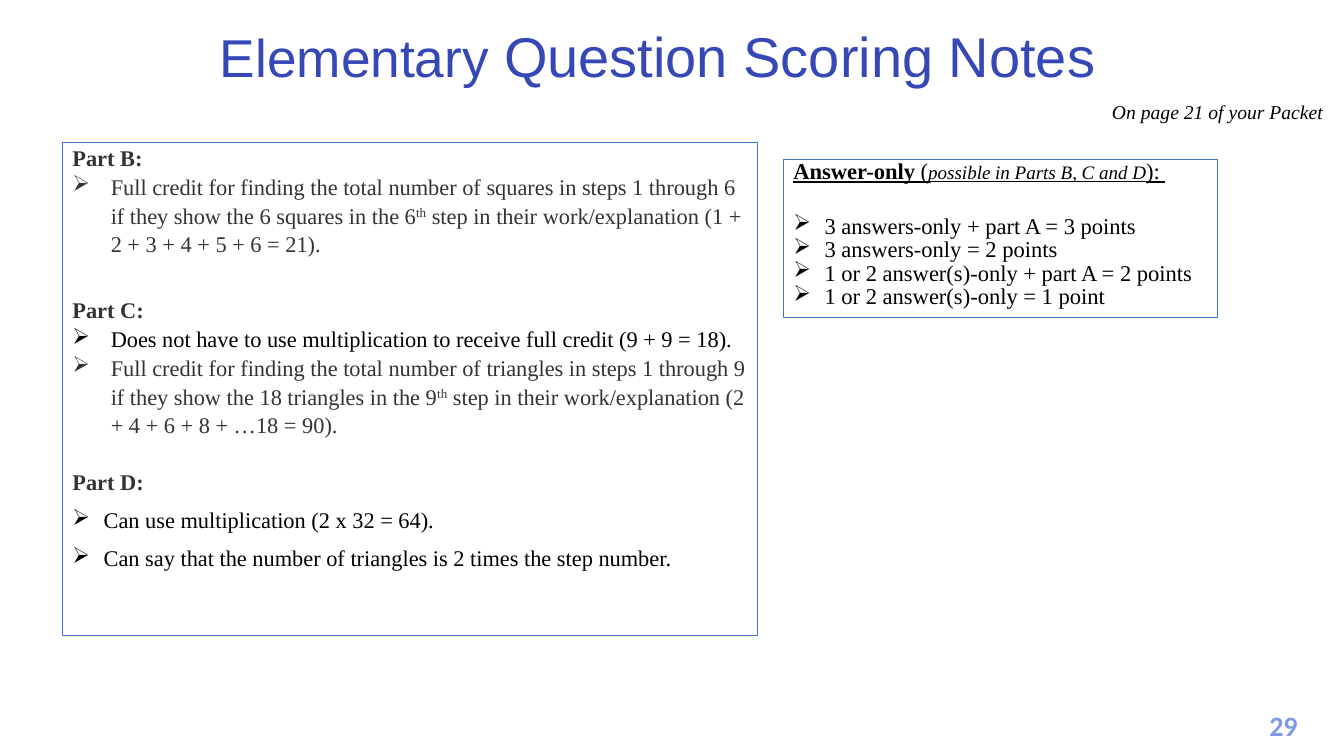
from dataclasses import dataclass

from lxml.etree import SubElement
from pptx import Presentation
from pptx.dml.color import RGBColor
from pptx.enum.shapes import MSO_SHAPE as Shape
from pptx.enum.text import MSO_ANCHOR as Anchor, PP_ALIGN as Align
from pptx.oxml.ns import qn
from pptx.util import Pt

EMU_PER_PX = 9144
BLACK = RGBColor(0x00, 0x00, 0x00)
GRAY = RGBColor(0x33, 0x33, 0x33)
TITLE_BLUE = RGBColor(0x36, 0x47, 0xB6)
NUMBER_BLUE = RGBColor(0x83, 0x97, 0xE7)
BORDER_BLUE = RGBColor(0x44, 0x72, 0xC4)
SERIF = "Times New Roman"


@dataclass(frozen=True)
class Span:
    text: str
    size: float = 16
    color: RGBColor = BLACK
    font: str = SERIF
    bold: bool = False
    italic: bool = False
    underline: bool = False
    superscript: bool = False


@dataclass(frozen=True)
class Line:
    spans: tuple[Span, ...]
    spacing: float = 1.0
    before: float = 0
    indent: int = 0
    align: Align = Align.LEFT


@dataclass(frozen=True)
class Box:
    left: int
    top: int
    width: int
    height: int
    lines: tuple[Line, ...]
    bordered: bool = False
    anchor: Anchor = Anchor.TOP


def px(length: int) -> int:
    return length * EMU_PER_PX


def add_bullet(paragraph, indent: int) -> None:
    properties = paragraph._p.get_or_add_pPr()
    properties.set("marL", str(px(indent)))
    properties.set("indent", str(-px(indent)))
    SubElement(properties, qn("a:buChar")).set("char", "➢")


def write_span(paragraph, span: Span) -> None:
    run = paragraph.add_run()
    run.text = span.text
    font = run.font
    font.name = span.font
    font.size = Pt(span.size)
    font.color.rgb = span.color
    font.bold = span.bold
    font.italic = span.italic
    font.underline = span.underline
    if span.superscript:
        run._r.get_or_add_rPr().set("baseline", "30000")


def write_line(paragraph, line: Line) -> None:
    if line.indent:
        add_bullet(paragraph, line.indent)
    paragraph.alignment = line.align
    paragraph.line_spacing = line.spacing
    paragraph.space_before = Pt(line.before)
    for span in line.spans:
        write_span(paragraph, span)


def draw_box(slide, box: Box) -> None:
    frame = px(box.left), px(box.top), px(box.width), px(box.height)
    if box.bordered:
        shape = slide.shapes.add_shape(Shape.RECTANGLE, *frame)
        shape.shadow.inherit = False
        shape.fill.background()
        shape.line.color.rgb = BORDER_BLUE
        shape.line.width = Pt(0.75)
    else:
        shape = slide.shapes.add_textbox(*frame)
    text_frame = shape.text_frame
    text_frame.word_wrap = True
    text_frame.vertical_anchor = box.anchor
    for index, line in enumerate(box.lines):
        paragraph = text_frame.add_paragraph() if index else text_frame.paragraphs[0]
        write_line(paragraph, line)


def heading(text: str, spacing: float = 0.9, before: float = 0) -> Line:
    return Line((Span(text, color=GRAY, bold=True),), spacing, before)


def credit_rule(start: str, end: str) -> Line:
    spans = (
        Span(start, color=GRAY),
        Span("th", color=GRAY, superscript=True),
        Span(end, color=GRAY),
    )
    return Line(spans, 1.07, indent=38)


def allowance(text: str) -> Line:
    return Line((Span(text),), 0.9, 10, 31)


def answer_score(text: str, before: float = 0) -> Line:
    return Line((Span(text, 16.1),), 0.87, before, 31)


PAGE_NUMBER = Box(1242, 698, 62, 44, (
    Line((Span("29", 20, NUMBER_BLUE, "Calibri", bold=True),), align=Align.CENTER),
))
TITLE = Box(51, 24, 1202, 70, (
    Line((
        Span("Elementary ", 38, TITLE_BLUE, "Arial"),
        Span("Question Scoring Notes", 40, TITLE_BLUE, "Arial"),
    ), 0.9, align=Align.CENTER),
), anchor=Anchor.BOTTOM)
PACKET_NOTE = Box(1093, 94, 231, 35, (
    Line((Span("On page 21 of your Packet", 14, italic=True),)),
))
PART_NOTES = Box(62, 141, 689, 490, (
    heading("Part B:"),
    credit_rule(
        "Full credit for finding the total number of squares in steps 1 through 6 "
        "if they show the 6 squares in the 6",
        " step in their work/explanation (1 + 2 + 3 + 4 + 5 + 6 = 21).",
    ),
    heading("Part C:", before=30),
    Line((
        Span("Does not have to use multiplication to receive full credit (9 + 9 = 18)."),
    ), 1.07, indent=38),
    credit_rule(
        "Full credit for finding the total number of triangles in steps 1 through 9 "
        "if they show the 18 triangles in the 9",
        " step in their work/explanation (2 + 4 + 6 + 8 + …18 = 90).",
    ),
    heading("Part D:", 1.07, 20),
    allowance("Can use multiplication (2 x 32 = 64)."),
    allowance("Can say that the number of triangles is 2 times the step number."),
), bordered=True)
ANSWER_ONLY = Box(777, 158, 431, 157, (
    Line((
        Span("Answer-only ", 16.1, bold=True, underline=True),
        Span("(", 16.1, underline=True),
        Span("possible in Parts B, C and D", 13.6, italic=True, underline=True),
        Span("): ", 16.1, underline=True),
    ), 0.7),
    answer_score("3 answers-only + part A = 3 points", 23),
    answer_score("3 answers-only = 2 points"),
    answer_score("1 or 2 answer(s)-only + part A = 2 points"),
    answer_score("1 or 2 answer(s)-only = 1 point"),
), bordered=True)


def main() -> None:
    presentation = Presentation()
    presentation.slide_width = px(1333)
    presentation.slide_height = px(750)
    slide = presentation.slides.add_slide(presentation.slide_layouts[6])
    for box in (PAGE_NUMBER, TITLE, PACKET_NOTE, PART_NOTES, ANSWER_ONLY):
        draw_box(slide, box)
    presentation.save("out.pptx")


if __name__ == "__main__":
    main()
